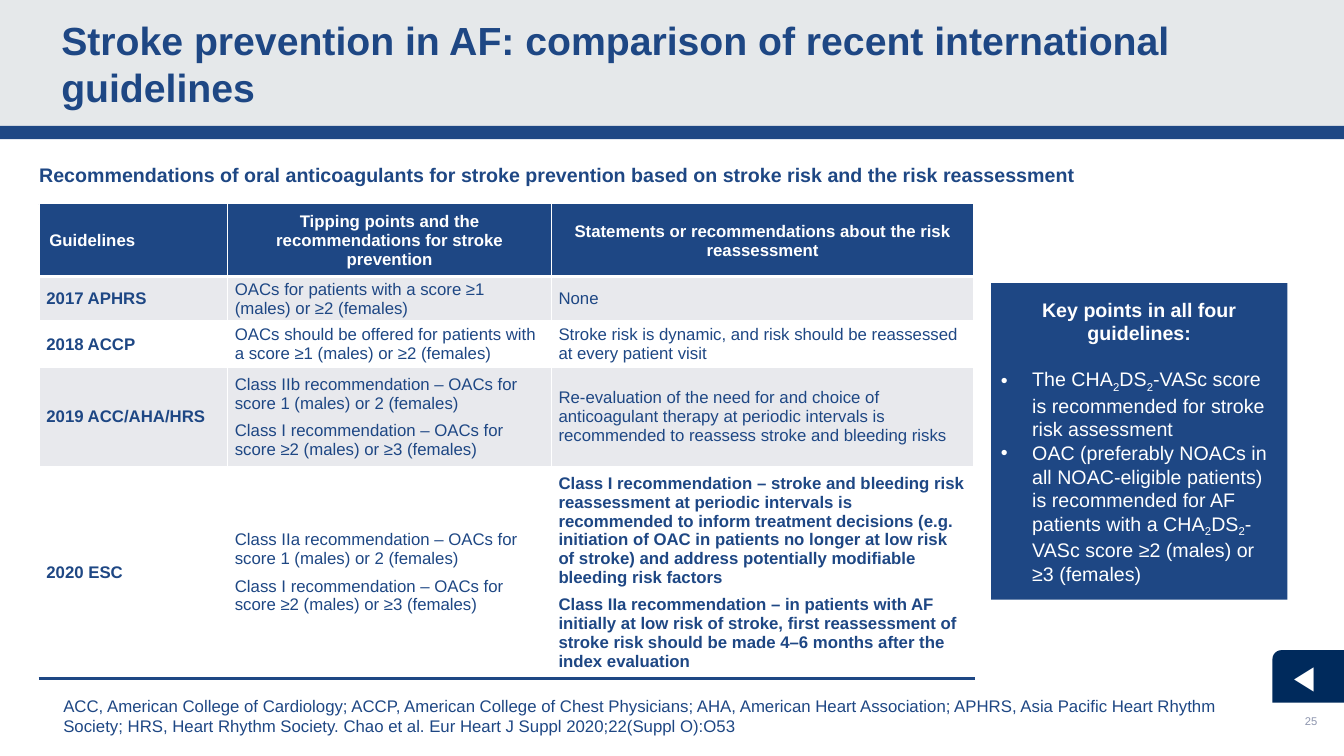
"""Build a slide comparing international guidelines on stroke prevention in AF."""
import math
from lxml import etree
from pptx import Presentation
from pptx.dml.color import RGBColor
from pptx.enum import shapes, text
from pptx.oxml.ns import qn
from pptx.util import Inches, Pt

NAVY, WHITE, STRIPE = "1E4784", "FFFFFF", "E8E9ED"
LEFT, CENTER = text.PP_ALIGN.LEFT, text.PP_ALIGN.CENTER
MIDDLE, BOTTOM = text.MSO_ANCHOR.MIDDLE, text.MSO_ANCHOR.BOTTOM


def paint(fill, color):
    """Give a fill or a font colour format a solid colour."""
    if hasattr(fill, "solid"):
        fill.solid()
        fill = fill.fore_color
    fill.rgb = RGBColor.from_string(color)


def write(frame, paragraphs, size, color=NAVY, bold=False, align=LEFT, font="Arial", gap=0):
    """Fill a text frame; parts between underscores become subscripts."""
    frame.word_wrap = True
    for index, content in enumerate(paragraphs):
        para = frame.paragraphs[0] if index == 0 else frame.add_paragraph()
        para.alignment = align
        para.space_before = para.space_after = Pt(gap)
        for part, words in enumerate(content.split("_")):
            span = para.add_run()
            span.text = words
            span.font.size, span.font.bold, span.font.name = Pt(size), bold, font
            paint(span.font.color, color)
            if part % 2:
                span.font._element.set("baseline", "-25000")


deck = Presentation()
deck.slide_width, deck.slide_height = Inches(13.33), Inches(7.5)
page = deck.slides.add_slide(deck.slide_layouts[6])

panels = []
for left, top, width, height, color in [
    (0, 0, 13.33, 1.26, "E5E8EA"),
    (0, 1.25, 13.33, 0.13, NAVY),
    (9.83, 2.81, 2.94, 3.14, NAVY),
]:
    panel = page.shapes.add_shape(
        shapes.MSO_SHAPE.RECTANGLE, Inches(left), Inches(top), Inches(width), Inches(height))
    panel.shadow.inherit = False
    paint(panel.fill, color)
    panel.line.fill.background()
    panels.append(panel)

for place, words, size, color, bold, align, anchor in [
    ((0.51, 0, 12.31, 1.26), "Stroke prevention in AF: comparison of recent international guidelines",
     28, NAVY, True, LEFT, MIDDLE),
    ((0.29, 1.56, 10.73, 0.34),
     "Recommendations of oral anticoagulants for stroke prevention based on stroke risk "
     "and the risk reassessment", 14, NAVY, True, LEFT, MIDDLE),
    ((0.53, 6.85, 12.14, 0.5),
     "ACC, American College of Cardiology; ACCP, American College of Chest Physicians; "
     "AHA, American Heart Association; APHRS, Asia Pacific Heart Rhythm Society; "
     "HRS, Heart Rhythm Society. Chao et al. Eur Heart J Suppl 2020;22(Suppl O):O53",
     12, NAVY, False, LEFT, BOTTOM),
    ((12.67, 6.95, 0.67, 0.4), "25", 8, "8D95AE", False, CENTER, MIDDLE),
]:
    box = page.shapes.add_textbox(*map(Inches, place))
    box.text_frame.vertical_anchor = anchor
    write(box.text_frame, [words], size, color, bold, align)

key_points = panels[-1].text_frame
key_points.vertical_anchor = MIDDLE
write(key_points, [
    "Key points in all four guidelines:",
    "The CHA_2_DS_2_-VASc score is recommended for stroke risk assessment",
    "OAC (preferably NOACs in all NOAC-eligible patients) is recommended for AF patients "
    "with a CHA_2_DS_2_-VASc score ≥2 (males) or ≥3 (females)",
], 14, WHITE)
heading, *points = key_points.paragraphs
heading.alignment, heading.space_after = CENTER, Pt(16)
heading.runs[0].font.bold = True
for para in points:
    properties = para._p.get_or_add_pPr()
    properties.set("marL", str(Inches(0.31)))
    properties.set("indent", str(Inches(-0.31)))
    etree.SubElement(properties, qn("a:buFont")).set("typeface", "Arial")
    etree.SubElement(properties, qn("a:buChar")).set("char", "•")

class_one = "Class I recommendation – OACs for score ≥2 (males) or ≥3 (females)"
rows = [
    (["Guidelines"], ["Tipping points and the recommendations for stroke prevention"],
     ["Statements or recommendations about the risk reassessment"]),
    (["2017 APHRS"], ["OACs for patients with a score ≥1 (males) or ≥2 (females)"], ["None"]),
    (["2018 ACCP"], ["OACs should be offered for patients with a score ≥1 (males) or ≥2 (females)"],
     ["Stroke risk is dynamic, and risk should be reassessed at every patient visit"]),
    (["2019 ACC/AHA/HRS"],
     ["Class IIb recommendation – OACs for score 1 (males) or 2 (females)", class_one],
     ["Re-evaluation of the need for and choice of anticoagulant therapy at periodic intervals "
      "is recommended to reassess stroke and bleeding risks"]),
    (["2020 ESC"],
     ["Class IIa recommendation – OACs for score 1 (males) or 2 (females)", class_one],
     ["Class I recommendation – stroke and bleeding risk reassessment at periodic intervals is "
      "recommended to inform treatment decisions (e.g. initiation of OAC in patients no longer "
      "at low risk of stroke) and address potentially modifiable bleeding risk factors",
      "Class IIa recommendation – in patients with AF initially at low risk of stroke, first "
      "reassessment of stroke risk should be made 4–6 months after the index evaluation"]),
]
last = len(rows) - 1
table = page.shapes.add_table(
    len(rows), 3, Inches(0.39), Inches(2.04), Inches(9.27), Inches(4.69)).table
table.horz_banding = False
for column, width in zip(table.columns, [1.87, 3.21, 4.19]):
    column.width = Inches(width)
for row, height in zip(table.rows, [0.7, 0.45, 0.45, 0.99, 2.1]):
    row.height = Inches(height)

for r, row in enumerate(rows):
    for c, paragraphs in enumerate(row):
        cell = table.cell(r, c)
        header = r == 0
        cell.vertical_anchor = MIDDLE
        if r or c:
            cell.margin_left = cell.margin_right = Inches(0.07)
            cell.margin_top = cell.margin_bottom = 0
        write(cell.text_frame, paragraphs, 12, WHITE if header else NAVY,
              header or c == 0 or (r == last and c == 2),
              CENTER if header and c else LEFT, gap=0 if header else 3)
        borders = []
        if c > 0:
            borders.append(("a:lnL", WHITE, 1))
        if c < 2:
            borders.append(("a:lnR", WHITE, 1))
        if r < 2:
            borders.append(("a:lnT", NAVY, 2) if header else ("a:lnT", WHITE, 2.25))
        if header:
            borders.append(("a:lnB", WHITE, 2.25))
        if r == last:
            borders.append(("a:lnB", NAVY, 2))
        for tag, color, weight in borders:
            line = etree.SubElement(cell._tc.get_or_add_tcPr(), qn(tag), w=str(Pt(weight)))
            solid = etree.SubElement(line, qn("a:solidFill"))
            etree.SubElement(solid, qn("a:srgbClr"), val=color)
        if header or r % 2:
            paint(cell.fill, NAVY if header else STRIPE)
        else:
            cell.fill.background()

tab_left, tab_top, tab_right, tab_bottom, radius = 12.62, 6.45, 13.33, 6.97, 0.09
corner = [(tab_left + radius * (1 - math.sin(angle)), tab_top + radius * (1 - math.cos(angle)))
          for angle in (math.radians(15 * step) for step in range(7))]
outline = [(tab_right, tab_top), *corner, (tab_left, tab_bottom), (tab_right, tab_bottom)]
points = [(Inches(x), Inches(y)) for x, y in outline]
builder = page.shapes.build_freeform(*points[0])
builder.add_line_segments(points[1:])
back_tab = builder.convert_to_shape()
back_tab.shadow.inherit = False
paint(back_tab.fill, "002A5C")
back_tab.line.fill.background()
frame = back_tab.text_frame
frame.margin_left = frame.margin_right = frame.margin_top = frame.margin_bottom = 0
frame.vertical_anchor = MIDDLE
write(frame, ["◀ "], 24, WHITE, True, CENTER, "Arial Narrow")

deck.save("out.pptx")
